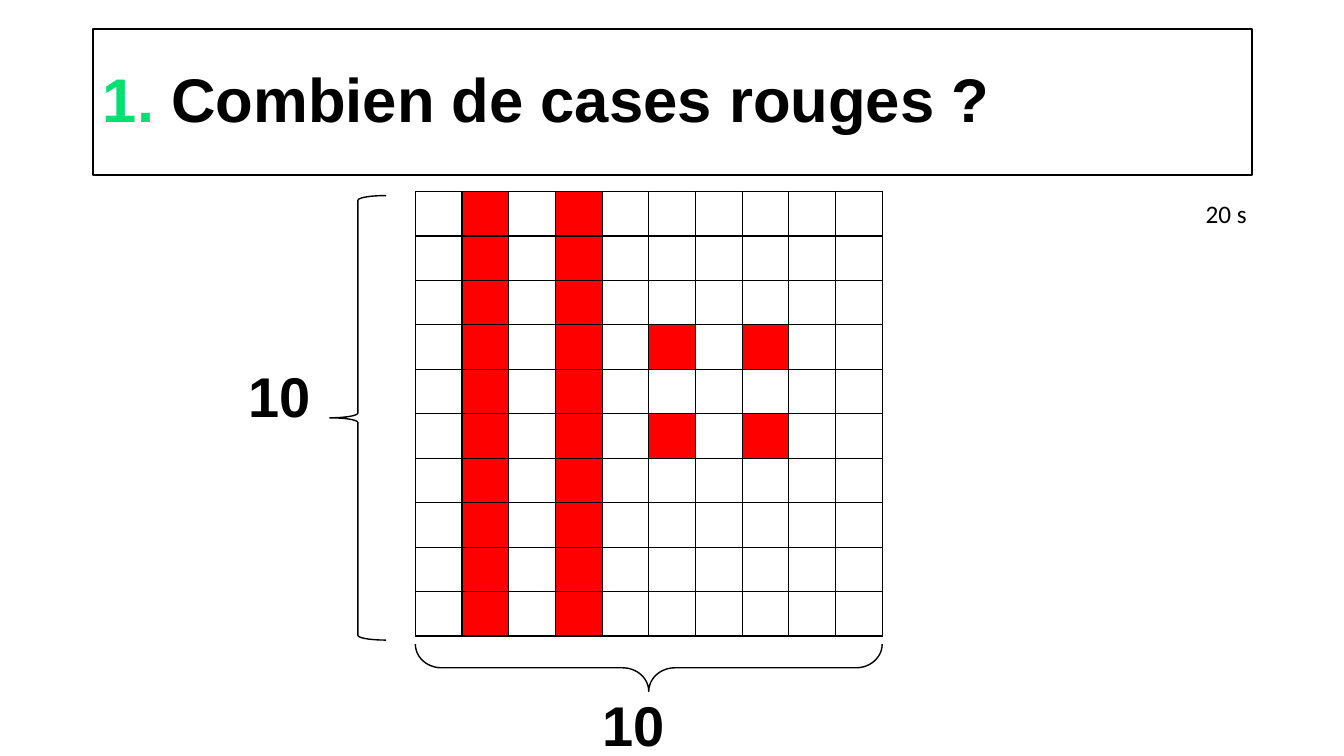
from lxml import etree
from pptx import Presentation
from pptx.dml.color import RGBColor
from pptx.enum import shapes, text
from pptx.oxml import ns
from pptx.util import Inches, Pt

COLOURS = {"black": "000000", "red": "FF0000", "green": "00E172"}
SIDE = 10
RED_COLUMNS = (1, 3)
RED_SINGLES = {(3, 5), (3, 7), (5, 5), (5, 7)}


def colour(name):
    return RGBColor.from_string(COLOURS[name])


def add_run(paragraph, words, size, font="Arial", bold=True, ink="black"):
    run = paragraph.add_run()
    run.text = words
    run.font.name = font
    run.font.size = Pt(size)
    run.font.bold = bold
    run.font.color.rgb = colour(ink)


def set_title(slide):
    title = slide.shapes.title
    title.left, title.top = Inches(0.92), Inches(0.29)
    title.width, title.height = Inches(11.5), Inches(1.45)
    title.line.color.rgb = colour("black")
    title.line.width = Pt(1.5)
    frame = title.text_frame
    frame.auto_size = text.MSO_AUTO_SIZE.NONE
    frame.vertical_anchor = text.MSO_ANCHOR.MIDDLE
    paragraph = frame.paragraphs[0]
    paragraph.alignment = text.PP_ALIGN.LEFT
    paragraph.line_spacing = 0.9
    add_run(paragraph, "1. ", 44, ink="green")
    add_run(paragraph, "Combien de cases rouges ?", 44)


def add_borders(cell):
    properties = cell._tc.get_or_add_tcPr()
    for side in ("a:lnL", "a:lnR", "a:lnT", "a:lnB"):
        line = etree.SubElement(properties, ns.qn(side), w=str(Pt(1)))
        fill = etree.SubElement(line, ns.qn("a:solidFill"))
        etree.SubElement(fill, ns.qn("a:srgbClr"), val=COLOURS["black"])


def add_grid(slide, left, top, width, height):
    frame = slide.shapes.add_table(
        SIDE, SIDE, Inches(left), Inches(top), Inches(width), Inches(height))
    table = frame.table
    table.first_row = table.horz_banding = False
    for row in range(SIDE):
        for column in range(SIDE):
            cell = table.cell(row, column)
            add_borders(cell)
            if column in RED_COLUMNS or (row, column) in RED_SINGLES:
                cell.fill.solid()
                cell.fill.fore_color.rgb = colour("red")
            else:
                cell.fill.background()


def add_brace(slide, left, top, width, height, rotation=0, curve=0.0833):
    brace = slide.shapes.add_shape(
        shapes.MSO_SHAPE.LEFT_BRACE,
        Inches(left), Inches(top), Inches(width), Inches(height))
    brace.rotation = rotation
    brace.adjustments[0] = curve
    brace.shadow.inherit = False
    brace.fill.background()
    brace.line.color.rgb = colour("black")
    brace.line.width = Pt(1)


def add_label(slide, words, left, top, width, height, size, **style):
    box = slide.shapes.add_textbox(
        Inches(left), Inches(top), Inches(width), Inches(height))
    frame = box.text_frame
    frame.word_wrap = False
    frame.auto_size = text.MSO_AUTO_SIZE.SHAPE_TO_FIT_TEXT
    add_run(frame.paragraphs[0], words, size, **style)


def main():
    presentation = Presentation()
    presentation.slide_width = Inches(13.33)
    presentation.slide_height = Inches(7.5)
    slide = presentation.slides.add_slide(presentation.slide_layouts[5])
    set_title(slide)
    add_grid(slide, 4.12, 1.9, 4.63, 4.41)
    add_brace(slide, 3.27, 1.94, 0.56, 4.41)
    add_label(slide, str(SIDE), 2.37, 3.54, 0.83, 0.77, 40)
    add_brace(slide, 6.2, 4.31, 0.47, 4.63, rotation=270, curve=0.55)
    add_label(slide, str(SIDE), 5.88, 6.8, 0.83, 0.77, 40)
    add_label(slide, "20 s", 11.86, 1.92, 0.61, 0.4, 18, font="Calibri", bold=False)
    presentation.save("out.pptx")


if __name__ == "__main__":
    main()
